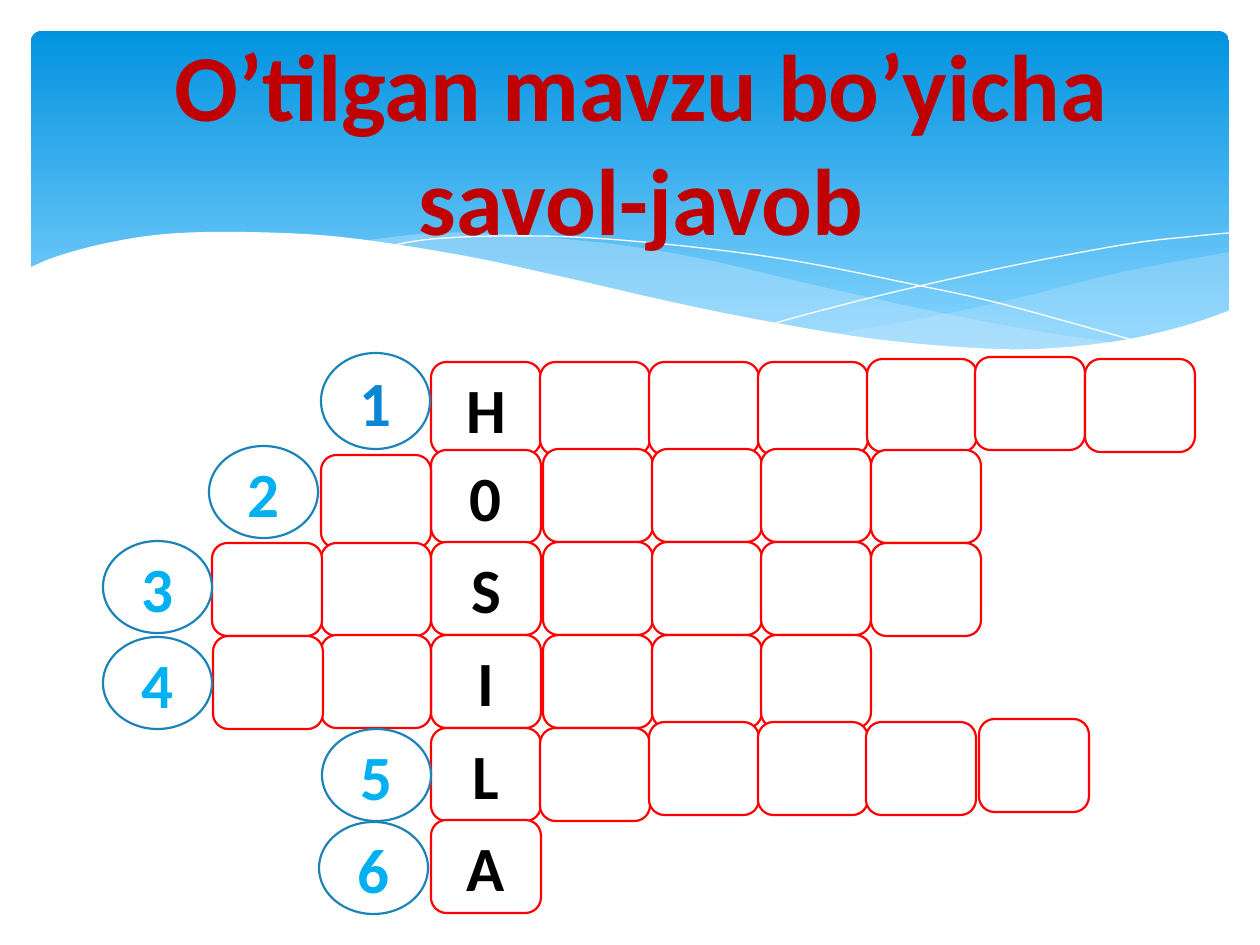
from lxml import etree
from pptx import Presentation
from pptx.dml.color import RGBColor
from pptx.enum.shapes import MSO_SHAPE
from pptx.enum.text import MSO_ANCHOR, MSO_AUTO_SIZE, PP_ALIGN
from pptx.oxml.ns import qn
from pptx.util import Inches, Pt

ROUND, OVAL = MSO_SHAPE.ROUNDED_RECTANGLE, MSO_SHAPE.OVAL
CENTER, MIDDLE = PP_ALIGN.CENTER, MSO_ANCHOR.MIDDLE
NO_AUTOFIT = MSO_AUTO_SIZE.NONE

WHITE = RGBColor(0xFF, 0xFF, 0xFF)
BLACK = RGBColor(0, 0, 0)
RED = RGBColor(0xFF, 0, 0)
DARK_RED = RGBColor(0xC0, 0, 0)
SKY_TOP = RGBColor(0x02, 0x93, 0xE0)
SKY_BOTTOM = RGBColor(0x83, 0xD3, 0xFE)
MIST = RGBColor(0xC6, 0xE7, 0xFC)
RING = RGBColor(0x1C, 0x83, 0xB9)
BLUE = RGBColor(0x0B, 0x87, 0xD6)
CYAN = RGBColor(0, 0xB0, 0xF0)

FONT = "Calibri"
PX = 914400 / 126  # EMU per pixel

# Content
TITLE = "O’tilgan mavzu bo’yicha savol-javob"

# Crossword rows: letter, letter top, clue number, number box, number colour, empty cells
COLUMN_X, CELL_W, CELL_H = 431, 110, 93
ROWS = [
    ("H", 362, "1", (321, 353, 109, 96), BLUE,
     [(540, 362), (649, 362), (758, 362), (867, 359), (975, 357), (1085, 359)]),
    ("0", 450, "2", (209, 446, 109, 92), CYAN,
     [(543, 449), (652, 449), (761, 449), (871, 450), (321, 455)]),
    ("S", 542, "3", (103, 541, 109, 92), CYAN,
     [(543, 542), (652, 542), (761, 542), (871, 543), (321, 543), (212, 543)]),
    ("I", 635, "4", (103, 637, 109, 92), CYAN,
     [(543, 635), (652, 635), (761, 635), (321, 635), (213, 636)]),
    ("L", 728, "5", (322, 729, 109, 92), CYAN,
     [(540, 728), (649, 722), (758, 722), (866, 722), (979, 719)]),
    ("A", 820, "6", (319, 822, 109, 92), CYAN, []),
]

# Waves: smooth edges joined into one outline, fill, alpha in percent
WAVES_BACK = [
    ([[(1229, 252), (1142, 268), (1085, 281), (1014, 299), (919, 319), (833, 334)],
      [(833, 334), (906, 343), (984, 349), (1063, 349), (1121, 344), (1178, 330),
       (1229, 311)]], MIST, 29),
    ([[(1125, 344), (1055, 334), (977, 320), (890, 302), (793, 280), (717, 262),
       (648, 249), (586, 241), (503, 234), (433, 233), (360, 241)],
      [(360, 241), (431, 251), (509, 266), (566, 280), (668, 302), (757, 321),
       (838, 335), (909, 345), (974, 349), (1043, 350), (1092, 348), (1125, 344)]],
     MIST, 40),
]
WAVE_LINES = [
    [(389, 246), (433, 239), (505, 236), (591, 238), (701, 248), (801, 262),
     (916, 285), (1002, 304), (1143, 343)],
    [(772, 324), (823, 310), (907, 289), (1016, 265), (1128, 244), (1197, 236),
     (1229, 233)],
]
WAVE_FRONT = (
    [[(29, 268), (58, 256), (107, 243), (166, 234), (243, 232), (341, 237),
      (460, 255), (563, 277), (667, 301), (760, 320), (867, 338), (959, 347),
      (1037, 349), (1118, 341), (1184, 326), (1231, 310)],
     [(1231, 415), (29, 415)]], WHITE, 100)


def px(value):
    return round(value * PX)


def smooth(points, steps=6):
    """Catmull-Rom curve through the points."""
    padded = [points[0], *points, points[-1]]
    curve = [points[0]]
    for a, b, c, d in zip(padded, padded[1:], padded[2:], padded[3:]):
        for k in range(1, steps + 1):
            t = k / steps
            curve.append(tuple(
                (2 * q + (r - p) * t + (2 * p - 5 * q + 4 * r - s) * t ** 2
                 + (3 * q - p - 3 * r + s) * t ** 3) / 2
                for p, q, r, s in zip(a, b, c, d)))
    return curve


def add_outline(shapes, points, close):
    points = [(px(x), px(y)) for x, y in points]
    builder = shapes.build_freeform(*points[0], scale=1.0)
    builder.add_line_segments(points[1:], close=close)
    sp = builder.convert_to_shape()
    sp.shadow.inherit = False
    return sp


def add_wave(shapes, edges, color, alpha):
    points = [point for edge in edges for point in smooth(edge)]
    sp = add_outline(shapes, points, True)
    sp.fill.solid()
    sp.fill.fore_color.rgb = color
    sp.line.fill.background()
    if alpha < 100:
        clr = sp._element.spPr.find(".//" + qn("a:srgbClr"))
        etree.SubElement(clr, qn("a:alpha")).set("val", str(alpha * 1000))


def add_wave_line(shapes, points):
    sp = add_outline(shapes, smooth(points), False)
    sp.fill.background()
    sp.line.color.rgb = WHITE
    sp.line.width = Pt(0)


def set_text(tf, text, size, color):
    tf.text = text
    tf.word_wrap = True
    tf.vertical_anchor = MIDDLE
    p = tf.paragraphs[0]
    p.alignment = CENTER
    p.font.name, p.font.size, p.font.bold = FONT, Pt(size), True
    p.font.color.rgb = color


def add_box(shapes, kind, box, line, text="", color=BLACK):
    sp = shapes.add_shape(kind, *map(px, box))
    sp.shadow.inherit = False
    sp.fill.solid()
    sp.fill.fore_color.rgb = WHITE
    sp.line.color.rgb = line
    sp.line.width = Pt(1.25)
    if text:
        set_text(sp.text_frame, text, 36, color)


def main():
    prs = Presentation()
    prs.slide_width, prs.slide_height = Inches(10), Inches(7.5)
    s = prs.slides.add_slide(prs.slide_layouts[5])
    shapes = s.shapes

    # Sky panel
    sky = shapes.add_shape(ROUND, *map(px, (31, 31, 1198, 340)))
    sky.adjustments[0] = 0.03
    sky.shadow.inherit = False
    sky.line.fill.background()
    sky.fill.gradient()
    sky.fill.gradient_angle = 270
    for stop, color, position in zip(sky.fill.gradient_stops,
                                     (SKY_TOP, SKY_BOTTOM), (0, 0.9)):
        stop.color.rgb = color
        stop.position = position

    # Waves
    for wave in WAVES_BACK:
        add_wave(shapes, *wave)
    for points in WAVE_LINES:
        add_wave_line(shapes, points)
    add_wave(shapes, *WAVE_FRONT)

    # Title, raised above the waves
    title = shapes.title
    title.left, title.top, title.width, title.height = map(px, (74, 66, 1134, 179))
    tf = title.text_frame
    set_text(tf, TITLE, 54, DARK_RED)
    tf.auto_size = NO_AUTOFIT
    tf.margin_bottom = px(36)
    shapes._spTree.append(title._element)

    # Crossword: key column, empty cells, clue numbers
    for letter, top, *_ in ROWS:
        add_box(shapes, ROUND, (COLUMN_X, top, CELL_W, CELL_H), RED, letter)
    for *_, cells in ROWS:
        for x, y in cells:
            add_box(shapes, ROUND, (x, y, CELL_W, CELL_H), RED)
    for _, _, number, box, color, _ in ROWS:
        add_box(shapes, OVAL, box, RING, number, color)

    prs.save("out.pptx")


if __name__ == "__main__":
    main()
